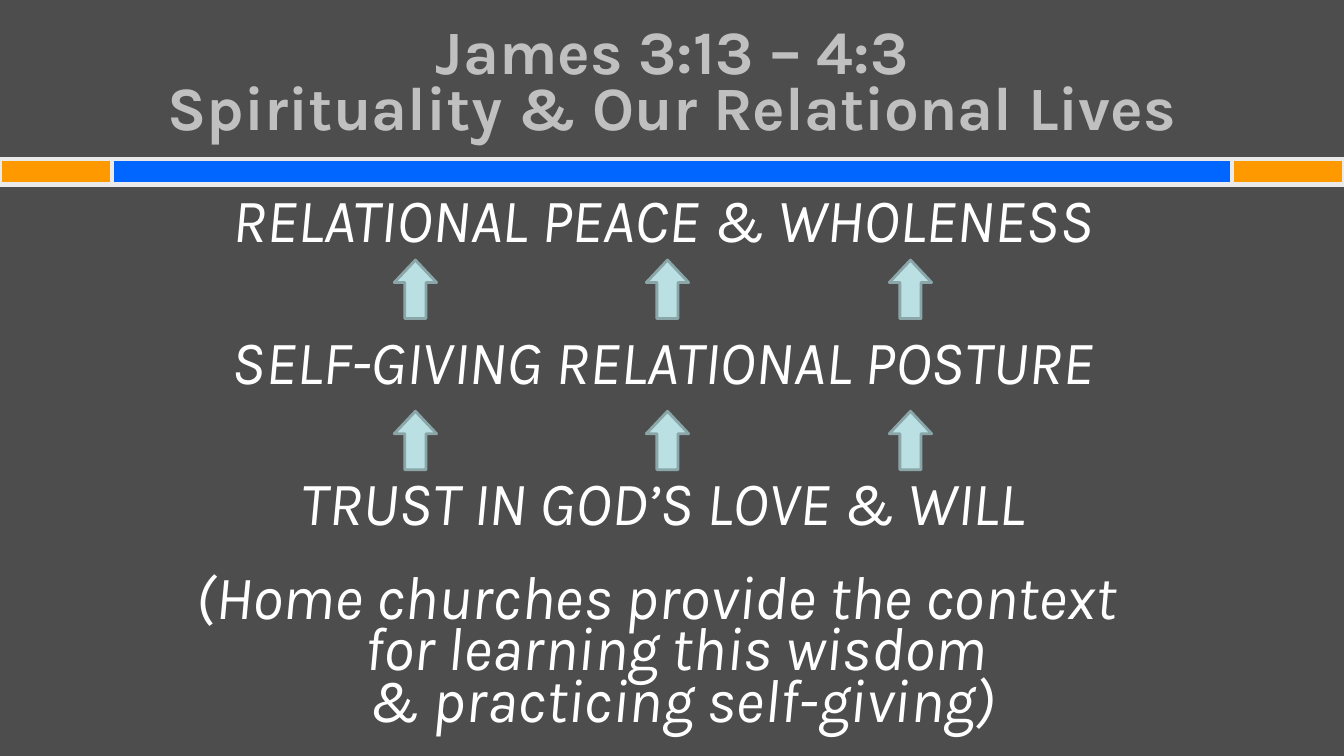
from pptx import Presentation
from pptx.dml.color import RGBColor
from pptx.enum.shapes import MSO_SHAPE
from pptx.enum.text import MSO_ANCHOR, PP_ALIGN
from pptx.util import Inches, Pt

WIDTH, HEIGHT = 13.33, 7.5
FONT = "Karla"
TEXT_SIZE = 44

# Ribbon below the title
RIBBON_TOP, RIBBON_HEIGHT = 1.58, 0.25
RIBBON_END = WIDTH / 12

# Arrow grid
ARROW_COLUMNS = [3.91, 6.41, 8.82]
ARROW_ROWS = [2.58, 4.08]
ARROW_WIDTH, ARROW_HEIGHT = 0.42, 0.58

TITLE = "James 3:13 – 4:3\vSpirituality & Our Relational Lives"

# Each step with its space before, in points
STEPS = [
    ("RELATIONAL PEACE & WHOLENESS", 0),
    ("SELF-GIVING RELATIONAL POSTURE", 64),
    ("TRUST IN GOD’S LOVE & WILL", 64),
    ("(Home churches provide the context \vfor learning this wisdom \v"
     "& practicing self-giving)", 30),
]


def color(hex_string):
    return RGBColor.from_string(hex_string)


def add_block(slide, kind, left, top, width, height, fill, line, line_width):
    shape = slide.shapes.add_shape(
        kind, Inches(left), Inches(top), Inches(width), Inches(height))
    shape.shadow.inherit = False
    shape.fill.solid()
    shape.fill.fore_color.rgb = color(fill)
    shape.line.color.rgb = color(line)
    shape.line.width = Pt(line_width)
    return shape


def add_ribbon_part(slide, left, width, fill):
    add_block(slide, MSO_SHAPE.RECTANGLE, left, RIBBON_TOP, width,
              RIBBON_HEIGHT, fill, "EAEAEA", 3)


def add_up_arrow(slide, left, top):
    arrow = add_block(slide, MSO_SHAPE.DOWN_ARROW, left, top, ARROW_WIDTH,
                      ARROW_HEIGHT, "BBE0E3", "8AA6A8", 2)
    arrow.rotation = 180
    arrow.adjustments[0] = 0.5
    arrow.adjustments[1] = 0.53


def add_text_frame(slide, left, top, width, height, anchor):
    box = slide.shapes.add_textbox(
        Inches(left), Inches(top), Inches(width), Inches(height))
    text_frame = box.text_frame
    text_frame.word_wrap = True
    text_frame.vertical_anchor = anchor
    return text_frame


def write_paragraph(paragraph, text, text_color, line_spacing,
                    bold=False, italic=False):
    paragraph.text = text
    paragraph.alignment = PP_ALIGN.CENTER
    paragraph.line_spacing = line_spacing
    for run in paragraph.runs:
        run.font.name = FONT
        run.font.size = Pt(TEXT_SIZE)
        run.font.bold = bold
        run.font.italic = italic
        run.font.color.rgb = color(text_color)


def add_title(slide):
    text_frame = add_text_frame(slide, 0.67, 0.3, 12, 1.12, MSO_ANCHOR.MIDDLE)
    write_paragraph(text_frame.paragraphs[0], TITLE, "C0C0C0", Pt(40), bold=True)


def add_steps(slide):
    text_frame = add_text_frame(slide, 0.1, 1.95, 12.95, 5.35, MSO_ANCHOR.TOP)
    for index, (text, space_before) in enumerate(STEPS):
        paragraph = (text_frame.add_paragraph() if index
                     else text_frame.paragraphs[0])
        write_paragraph(paragraph, text, "FFFFFF", 0.7, italic=True)
        paragraph.space_before = Pt(space_before)
        # Hanging indent
        properties = paragraph._p.get_or_add_pPr()
        properties.set("marL", str(Inches(0.38)))
        properties.set("indent", str(Inches(-0.38)))


def main():
    presentation = Presentation()
    presentation.slide_width = Inches(WIDTH)
    presentation.slide_height = Inches(HEIGHT)
    slide = presentation.slides.add_slide(presentation.slide_layouts[6])
    slide.background.fill.solid()
    slide.background.fill.fore_color.rgb = color("4D4D4D")

    # Ribbon: full-width band with an accent at each end
    add_ribbon_part(slide, 0, WIDTH, "0066FF")
    for left in (0, WIDTH - RIBBON_END):
        add_ribbon_part(slide, left, RIBBON_END, "FF9900")

    # Text
    add_title(slide)
    add_steps(slide)

    # Arrows between the steps
    for top in ARROW_ROWS:
        for left in ARROW_COLUMNS:
            add_up_arrow(slide, left, top)

    presentation.save("out.pptx")


if __name__ == "__main__":
    main()
